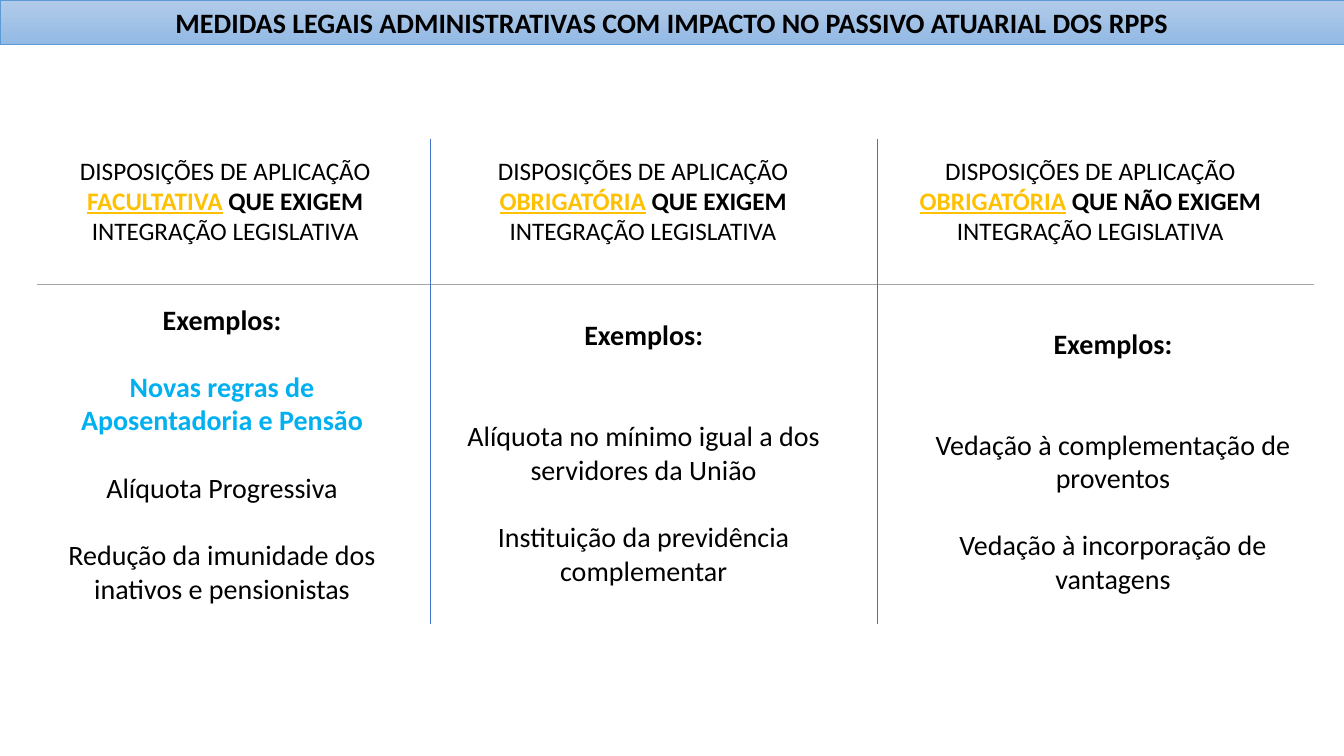
"""Build the slide on legal measures that affect the actuarial liabilities of the RPPS."""
from typing import NamedTuple

from lxml import etree
from pptx import Presentation
from pptx import util as u
from pptx.dml.color import RGBColor
from pptx.enum import shapes, text
from pptx.oxml import ns

PX = 9525
FONT = "Calibri"
LINE_PT = 24

BLACK = RGBColor(0x00, 0x00, 0x00)
GOLD = RGBColor(0xFF, 0xC0, 0x00)
SKY = RGBColor(0x00, 0xB0, 0xF0)
GRAY = RGBColor(0xA5, 0xA5, 0xA5)
BLUE = RGBColor(0x44, 0x72, 0xC4)
BANNER_EDGE = RGBColor(0x5B, 0x9B, 0xD5)
BANNER_TOP = RGBColor(0xB1, 0xCB, 0xE9)
BANNER_BOTTOM = RGBColor(0x93, 0xB9, 0xE4)

PLAIN = {"size": u.Pt(20), "name": FONT, "bold": False}
STRONG = PLAIN | {"bold": True}
HEADING = PLAIN | {"size": u.Pt(18)}
HEADING_STRONG = HEADING | {"bold": True}
HEADING_KEY = HEADING_STRONG | {"underline": True}


class Box(NamedTuple):
    """Position and size in px."""
    left: int
    top: int
    width: int
    height: int


class Run(NamedTuple):
    """A piece of text with its format."""
    words: str
    style: dict = PLAIN
    color: RGBColor = BLACK


class Example(NamedTuple):
    """A line of examples with the number of free lines above it."""
    run: Run
    gap: int = 1


class Column(NamedTuple):
    """A heading and its examples."""
    heading_left: int
    key_word: str
    demand: str
    body: Box
    examples: list[Example]


class Rule(NamedTuple):
    """A straight line in px with its colour and width in points."""
    x1: int
    y1: int
    x2: int
    y2: int
    color: RGBColor
    width: float


TITLE = "MEDIDAS LEGAIS ADMINISTRATIVAS COM IMPACTO NO PASSIVO ATUARIAL DOS RPPS"
RULES = [
    Rule(35, 271, 1251, 271, GRAY, 1),
    Rule(410, 132, 410, 594, BLUE, 0.5),
    Rule(836, 132, 836, 594, BLUE, 0.5),
]
COLUMNS = [
    Column(12, "FACULTATIVA", "QUE EXIGEM ", Box(25, 283, 373, 300), [
        Example(Run("Novas regras de", STRONG, SKY)),
        Example(Run("Aposentadoria e Pensão", STRONG, SKY), 0),
        Example(Run("Alíquota Progressiva")),
        Example(Run("Redução da imunidade dos inativos e pensionistas")),
    ]),
    Column(410, "OBRIGATÓRIA", "QUE EXIGEM ", Box(427, 298, 372, 365), [
        Example(Run("Alíquota no mínimo igual a dos servidores da União"), 2),
        Example(Run("Instituição da previdência complementar")),
    ]),
    Column(836, "OBRIGATÓRIA", "QUE NÃO EXIGEM ", Box(869, 306, 382, 333), [
        Example(Run("Vedação à complementação de proventos"), 2),
        Example(Run("Vedação à incorporação de vantagens")),
    ]),
]


def scale(*lengths: int) -> list[int]:
    """Turn px into EMU."""
    return [length * PX for length in lengths]


def write(paragraph, runs: list[Run], gap: int = 0) -> None:
    """Fill a centred paragraph with runs."""
    paragraph.alignment = text.PP_ALIGN.CENTER
    if gap:
        paragraph.space_before = u.Pt(gap * LINE_PT)
    for run in runs:
        part = paragraph.add_run()
        part.text = run.words
        for attribute, value in run.style.items():
            setattr(part.font, attribute, value)
        part.font.color.rgb = run.color


def add_frame(slide, box: Box):
    """Add a wrapping text box and return its text frame."""
    frame = slide.shapes.add_textbox(*scale(*box)).text_frame
    frame.word_wrap = True
    return frame


def draw_rule(slide, rule: Rule) -> None:
    """Draw one divider without a shadow."""
    ends = scale(rule.x1, rule.y1, rule.x2, rule.y2)
    divider = slide.shapes.add_connector(shapes.MSO_CONNECTOR.STRAIGHT, *ends)
    divider.line.color.rgb = rule.color
    divider.line.width = u.Pt(rule.width)
    etree.SubElement(divider._element.spPr, ns.qn("a:effectLst"))


def draw_column(slide, column: Column) -> None:
    """Draw a heading with its examples below."""
    heading = add_frame(slide, Box(column.heading_left, 143, 405, 97))
    write(heading.paragraphs[0], [
        Run("DISPOSIÇÕES DE APLICAÇÃO ", HEADING),
        Run(column.key_word, HEADING_KEY, GOLD),
        Run(" ", HEADING),
        Run(column.demand, HEADING_STRONG),
        Run("INTEGRAÇÃO LEGISLATIVA", HEADING),
    ])
    body = add_frame(slide, column.body)
    write(body.paragraphs[0], [Run("Exemplos:", STRONG)])
    for example in column.examples:
        write(body.add_paragraph(), [example.run], example.gap)


def draw_banner(slide) -> None:
    """Draw the title on its gradient band."""
    banner = slide.shapes.add_shape(shapes.MSO_SHAPE.RECTANGLE, *scale(0, 0, 1280, 42))
    banner.shadow.inherit = False
    banner.fill.gradient()
    banner.fill.gradient_angle = 270
    for stop, color in zip(banner.fill.gradient_stops, (BANNER_TOP, BANNER_BOTTOM)):
        stop.color.rgb = color
    banner.line.color.rgb = BANNER_EDGE
    banner.line.width = u.Pt(0.5)
    banner.text_frame.word_wrap = True
    banner.text_frame.vertical_anchor = text.MSO_ANCHOR.MIDDLE
    write(banner.text_frame.paragraphs[0], [Run(TITLE, STRONG)])


def main() -> None:
    """Build and save the presentation."""
    deck = Presentation()
    deck.slide_width, deck.slide_height = scale(1280, 720)
    slide = deck.slides.add_slide(deck.slide_layouts[6])
    for rule in RULES:
        draw_rule(slide, rule)
    for column in COLUMNS:
        draw_column(slide, column)
    draw_banner(slide)
    deck.save("out.pptx")


if __name__ == "__main__":
    main()
